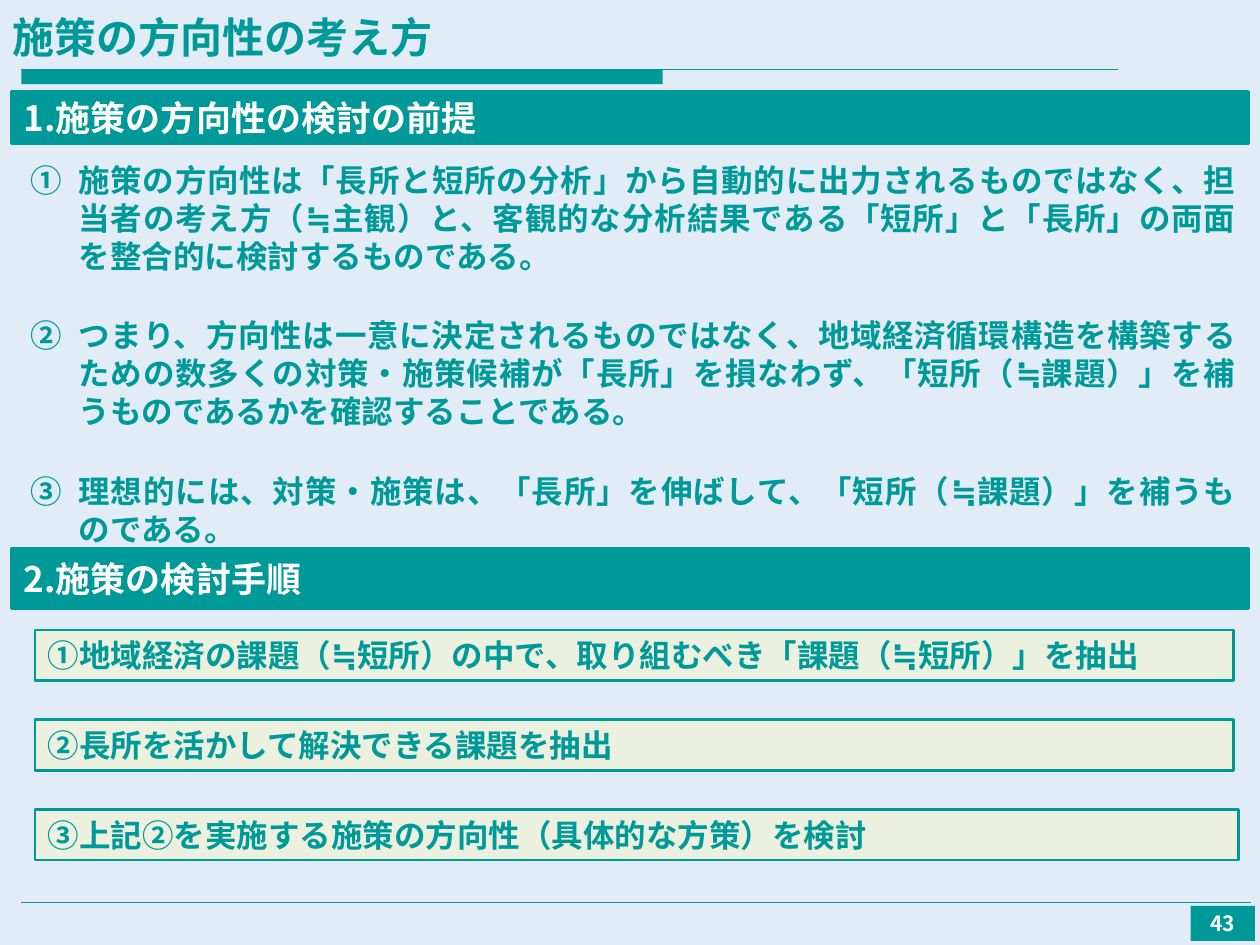
import pptx
import pptx.dml.color
import pptx.enum.shapes
import pptx.enum.text
import pptx.oxml.ns
import pptx.util
from lxml import etree
from pptx.util import Cm, Pt

FONT = "Noto Sans CJK JP"
TEAL = "009999"
WHITE = "FFFFFF"
ALIGN = pptx.enum.text.PP_ALIGN
ANCHOR = pptx.enum.text.MSO_ANCHOR
RECTANGLE = pptx.enum.shapes.MSO_SHAPE.RECTANGLE
STRAIGHT = pptx.enum.shapes.MSO_CONNECTOR.STRAIGHT
qn = pptx.oxml.ns.qn
rgb = pptx.dml.color.RGBColor.from_string


def write(shape, lines, size, color, align, anchor, before=0, after=0, numbered=False):
    """Fill a shape with bold paragraphs, optionally as a circled-number list."""
    frame = shape.text_frame
    frame.word_wrap = True
    frame.auto_size = pptx.enum.text.MSO_AUTO_SIZE.NONE
    frame.vertical_anchor = anchor
    frame.text = "\n".join(lines)
    for index, paragraph in enumerate(frame.paragraphs):
        paragraph.alignment = align
        paragraph.line_spacing = Pt(size * 1.2)
        paragraph.space_before = Pt(before if index else 0)
        paragraph.space_after = Pt(after)
        properties = paragraph._p.get_or_add_pPr()
        if numbered:
            properties.set("marL", str(Cm(0.97)))
            properties.set("indent", str(-Cm(0.97)))
            etree.SubElement(properties, qn("a:buFont"), typeface=FONT)
            etree.SubElement(properties, qn("a:buAutoNum"), type="circleNumDbPlain")
        paragraph.font.size = Pt(size)
        paragraph.font.bold = True
        paragraph.font.color.rgb = rgb(color)
        paragraph.font.name = FONT
        etree.SubElement(properties.find(qn("a:defRPr")), qn("a:ea"), typeface=FONT)


def add_box(left, top, width, height, fill, line_width=0):
    shape = slide.shapes.add_shape(RECTANGLE, Cm(left), Cm(top), Cm(width), Cm(height))
    shape.shadow.inherit = False
    shape.fill.solid()
    shape.fill.fore_color.rgb = rgb(fill)
    if line_width:
        shape.line.color.rgb = rgb(TEAL)
        shape.line.width = Pt(line_width)
    else:
        shape.line.fill.background()
    return shape


presentation = pptx.Presentation()
presentation.slide_width = Cm(25.4)
presentation.slide_height = Cm(19.05)
slide = presentation.slides.add_slide(presentation.slide_layouts[1])
slide.background.fill.solid()
slide.background.fill.fore_color.rgb = rgb("E1ECF7")

# Title, its band and the thin rules
title, body = slide.placeholders
title.left, title.top, title.width, title.height = Cm(0), Cm(0), Cm(25.4), Cm(1.37)
write(title, ["施策の方向性の考え方"], 24, TEAL, ALIGN.LEFT, ANCHOR.BOTTOM)
add_box(0.43, 1.4, 12.93, 0.3, TEAL)
for right, top in [(22.53, 1.4), (25.22, 18.19)]:
    rule = slide.shapes.add_connector(STRAIGHT, Cm(0.43), Cm(top), Cm(right), Cm(top))
    rule.line.color.rgb = rgb(TEAL)
    rule.line.width = Pt(0.75)
    etree.SubElement(rule._element.spPr, qn("a:effectLst"))

# Section headings
for heading, top, height in [
    ("1.施策の方向性の検討の前提", 1.85, 1.04),
    ("2.施策の検討手順", 11.05, 1.22),
]:
    bar = add_box(0.23, top, 24.94, height, TEAL, 1.75)
    bar.text_frame.margin_right = Cm(0.1)
    write(bar, [heading], 20, WHITE, ALIGN.LEFT, ANCHOR.MIDDLE)

# Premises
body.left, body.top, body.width, body.height = Cm(0.36), Cm(3.12), Cm(24.82), Cm(7.34)
premises = [
    "施策の方向性は「長所と短所の分析」から自動的に出力されるものではなく、担当者の考え方（≒主観）と、"
    "客観的な分析結果である「短所」と「長所」の両面を整合的に検討するものである。",
    "つまり、方向性は一意に決定されるものではなく、地域経済循環構造を構築するための数多くの対策・施策候補が"
    "「長所」を損なわず、「短所（≒課題）」を補うものであるかを確認することである。",
    "理想的には、対策・施策は、「長所」を伸ばして、「短所（≒課題）」を補うものである。",
]
write(body, premises, 18, TEAL, ALIGN.JUSTIFY, ANCHOR.TOP, 12, 12, numbered=True)

# Steps
steps = [
    ("①地域経済の課題（≒短所）の中で、取り組むべき「課題（≒短所）」を抽出", 24.16),
    ("②長所を活かして解決できる課題を抽出", 24.16),
    ("③上記②を実施する施策の方向性（具体的な方策）を検討", 24.26),
]
for index, (step, width) in enumerate(steps):
    box = add_box(0.71, 12.7 + 1.81 * index, width, 1.02, "EBF1DE", 1.5)
    write(box, [step], 18, TEAL, ALIGN.LEFT, ANCHOR.TOP)

# Page number
page_number = add_box(24, 18.26, 1.3, 0.71, TEAL)
page_number.text_frame.margin_left = page_number.text_frame.margin_right = Cm(0.2)
write(page_number, ["43"], 12, WHITE, ALIGN.CENTER, ANCHOR.MIDDLE)

presentation.save("out.pptx")
